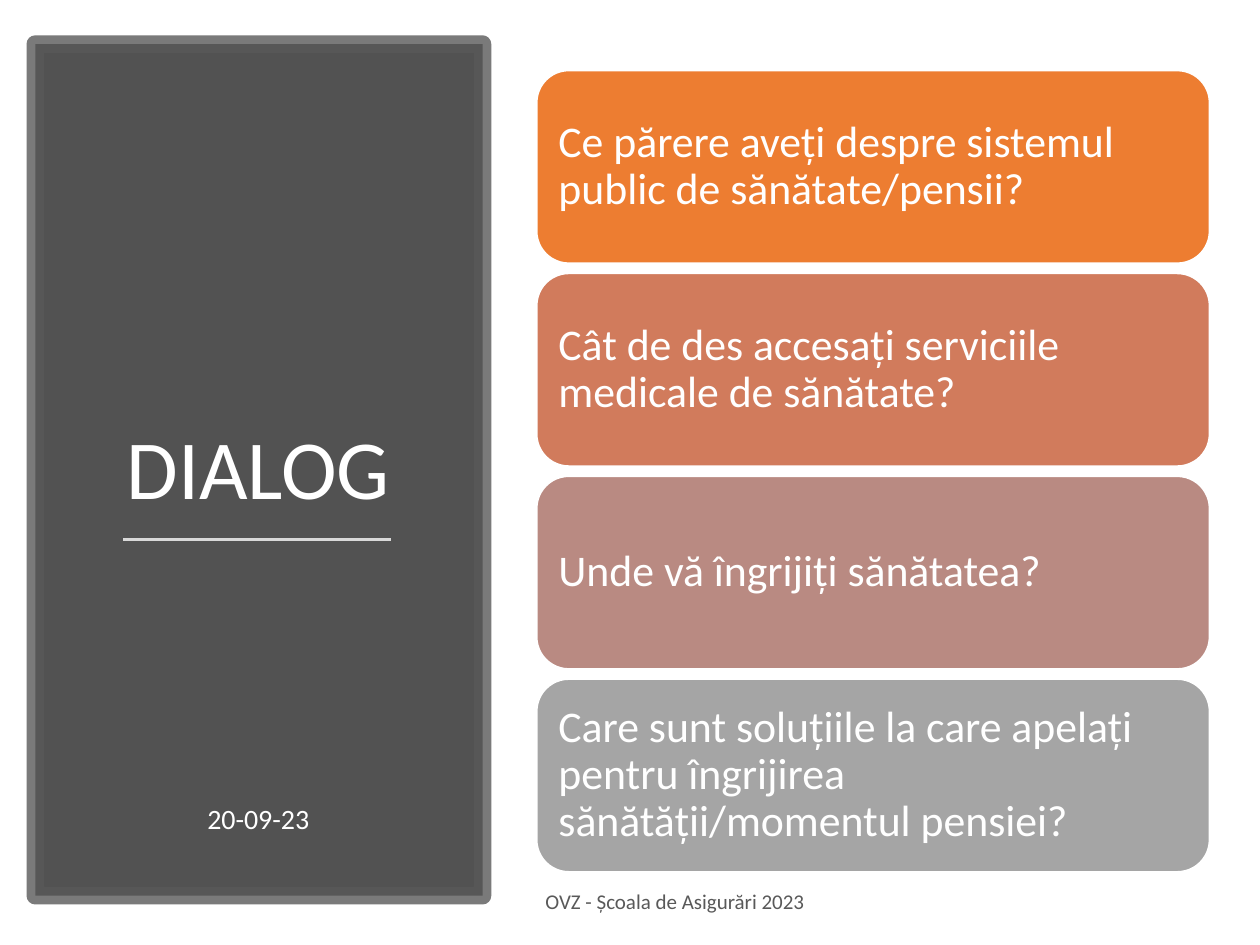
from lxml import etree
from pptx import Presentation
from pptx import util as u
from pptx.dml.color import RGBColor
from pptx.enum import shapes, text
from pptx.oxml.ns import qn

TITLE = "DIALOG"
DATE = "20-09-23"
FOOTER = "OVZ - Școala de Asigurări 2023"
QUESTIONS = [
    ("Ce părere aveți despre sistemul public de sănătate/pensii?", "ED7D31"),
    ("Cât de des accesați serviciile medicale de sănătate?", "D17B5C"),
    ("Unde vă îngrijiți sănătatea?", "B98A82"),
    ("Care sunt soluțiile la care apelați pentru îngrijirea sănătății/momentul pensiei?", "A5A5A5"),
]
CARD_LEFT, CARD_TOP, CARD_W, CARD_H, CARD_PITCH = 4.26, 0.56, 5.34, 1.53, 1.61
CENTER, LEFT = text.PP_ALIGN.CENTER, text.PP_ALIGN.LEFT
MIDDLE, BOTTOM = text.MSO_ANCHOR.MIDDLE, text.MSO_ANCHOR.BOTTOM


def paint(color_format, color, alpha=None):
    color_format.rgb = RGBColor.from_string(color)
    if alpha is not None:
        clr = color_format._xFill.find(qn("a:srgbClr"))
        etree.SubElement(clr, qn("a:alpha")).set("val", str(alpha * 1000))


def box(*lengths):
    return [u.Inches(n) for n in lengths]


def write(sp, words, size, color="FFFFFF", align=LEFT, anchor=MIDDLE,
          spacing=1.0, after=0, inset=(0.1, 0.05)):
    tf = sp.text_frame
    tf.word_wrap = True
    tf.auto_size = text.MSO_AUTO_SIZE.NONE
    tf.vertical_anchor = anchor
    tf.margin_left = tf.margin_right = u.Inches(inset[0])
    tf.margin_top = tf.margin_bottom = u.Inches(inset[1])
    p = tf.paragraphs[0]
    p.alignment = align
    p.line_spacing = spacing
    p.space_after = u.Pt(after)
    r = p.add_run()
    r.text = words
    r.font.name = "Calibri"
    r.font.size = u.Pt(size)
    paint(r.font.color, color)


def add_block(s, kind, place, fill, line, width, fill_alpha=None, line_alpha=None):
    sp = s.shapes.add_shape(kind, *box(*place))
    sp.shadow.inherit = False
    sp.fill.solid()
    paint_fill(sp.fill, fill, fill_alpha)
    sp.line.width = u.Pt(width)
    sp.line.fill.solid()
    paint_fill(sp.line.fill, line, line_alpha)
    return sp


def paint_fill(fill, color, alpha):
    paint(fill.fore_color, color, alpha)


def main():
    prs = Presentation()
    prs.slide_width, prs.slide_height = box(10, 7.5)
    s = prs.slides.add_slide(prs.slide_layouts[5])

    panel = add_block(s, shapes.MSO_SHAPE.RECTANGLE, (0.28, 0.35, 3.55, 6.76),
                      "404040", "595959", 10, 90, 80)
    title = s.shapes.title
    title.left, title.top, title.width, title.height = box(0.55, 1, 3, 3.16)
    write(title, TITLE, 48, align=CENTER, anchor=BOTTOM, spacing=0.9)
    title._element.addprevious(panel._element)

    rule = s.shapes.add_connector(shapes.MSO_CONNECTOR.STRAIGHT, *box(0.98, 4.28, 3.1, 4.28))
    rule.line.width = u.Pt(1.75)
    paint(rule.line.color, "D9D9D9")
    etree.SubElement(rule._element.spPr, qn("a:effectLst"))

    date = s.shapes.add_textbox(*box(0.55, 6.33, 3, 0.36))
    write(date, DATE, 16, align=CENTER, spacing=0.9, after=6)
    footer = s.shapes.add_textbox(*box(4.23, 6.95, 3.79, 0.4))
    write(footer, FOOTER, 12, color="595959", after=6)

    for i, (question, color) in enumerate(QUESTIONS):
        place = (CARD_LEFT, CARD_TOP + i * CARD_PITCH, CARD_W, CARD_H)
        card = add_block(s, shapes.MSO_SHAPE.ROUNDED_RECTANGLE, place, color, "FFFFFF", 1)
        write(card, question, 25, spacing=0.9, inset=(0.1, 0.1))

    prs.save("out.pptx")


if __name__ == "__main__":
    main()
